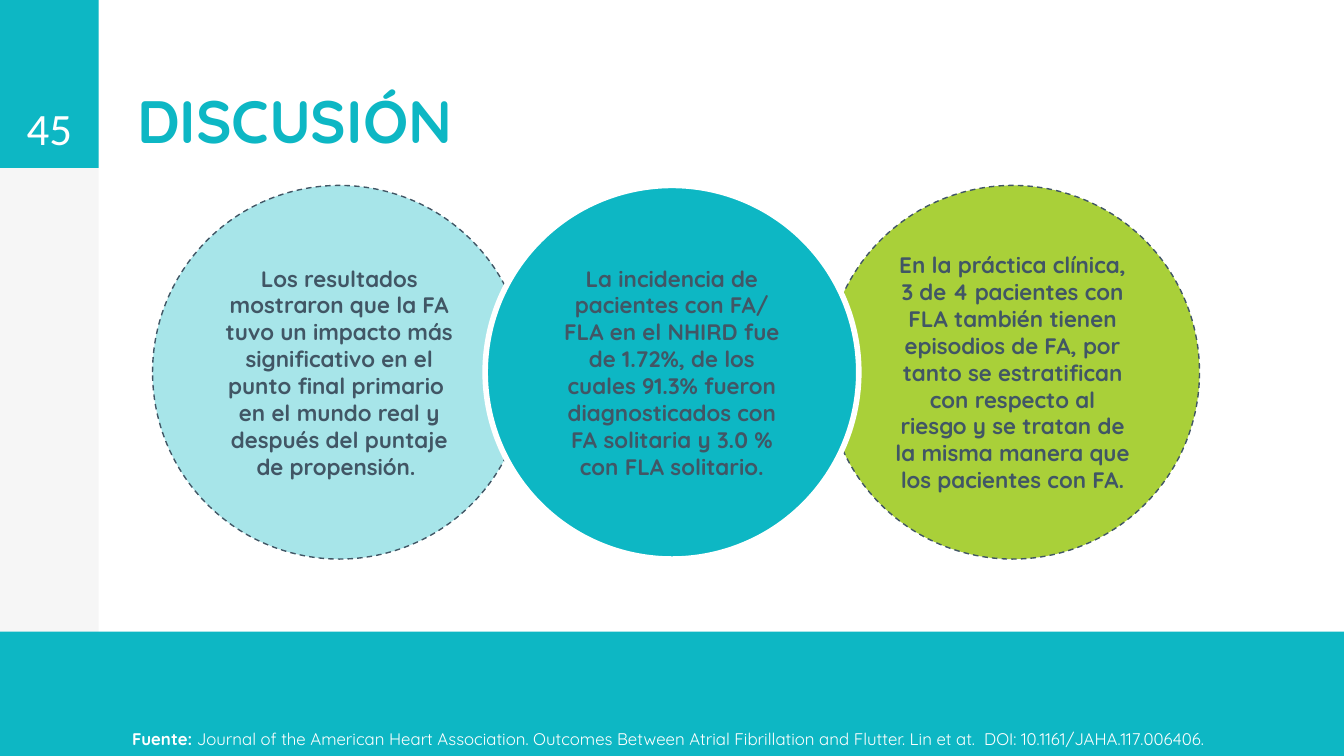
"""Build the discussion slide with three overlapping finding circles."""
from dataclasses import dataclass
from typing import Any, Optional

import pptx
import pptx.dml.color
import pptx.enum.dml
import pptx.enum.shapes
import pptx.enum.text
import pptx.util

EMU_PER_PX = 4572
ALIGN = pptx.enum.text.PP_ALIGN
ANCHOR = pptx.enum.text.MSO_ANCHOR
SHAPE = pptx.enum.shapes.MSO_SHAPE
DASH = pptx.enum.dml.MSO_LINE


@dataclass(frozen=True)
class Theme:
    teal: str = "0DB7C4"
    pale_teal: str = "A7E5E9"
    green: str = "A9D039"
    slate: str = "415665"
    grey: str = "F6F6F6"
    white: str = "FFFFFF"
    font: str = "Quicksand"
    number_font: str = "Calibri"
    title_size: int = 32
    number_size: int = 24
    body_size: int = 12
    source_size: int = 9


@dataclass(frozen=True)
class Box:
    left: int
    top: int
    width: int
    height: int

    def emu(self) -> tuple[int, ...]:
        return tuple(px * EMU_PER_PX for px in (self.left, self.top, self.width, self.height))


@dataclass(frozen=True)
class Finding:
    left: int
    fill: str
    line: str
    line_width: float
    dash: Optional[Any]
    text: str


THEME = Theme()
SLIDE = Box(0, 0, 2000, 1125)
SIDEBAR = Box(0, 0, 147, 1125)
NUMBER = Box(0, 0, 147, 250)
FOOTER = Box(0, 940, 2000, 185)
SOURCE = Box(177, 1075, 1764, 50)
TITLE = Box(184, 1, 1656, 250)
CIRCLE_TOP, DIAMETER = 276, 556

FINDINGS = (
    Finding(227, THEME.pale_teal, THEME.slate, 0.75, DASH.DASH,
            "Los resultados mostraron que la FA tuvo un impacto más significativo en el "
            "punto final primario  en el mundo real y después del puntaje de propensión. "),
    Finding(1229, THEME.green, THEME.slate, 0.75, DASH.DASH,
            "En la práctica clínica, 3 de 4 pacientes con FLA también tienen episodios de FA, "
            "por tanto se estratifican con respecto al riesgo y se tratan de la misma manera "
            "que los pacientes con FA."),
    Finding(722, THEME.teal, THEME.white, 3, None,
            "La incidencia de pacientes con FA/ FLA en el NHIRD fue de 1.72%, de los cuales "
            "91.3% fueron diagnosticados con FA solitaria y 3.0 % con FLA solitario."),
)


def rgb(value: str) -> pptx.dml.color.RGBColor:
    return pptx.dml.color.RGBColor.from_string(value)


def write(shape: Any, text: str, *, size: int, color: str, font: str = THEME.font,
          bold: bool = False, lead: str = "", align: Any = ALIGN.LEFT,
          anchor: Any = ANCHOR.MIDDLE, inset: int = 20) -> None:
    frame = shape.text_frame
    frame.word_wrap = True
    frame.auto_size = pptx.enum.text.MSO_AUTO_SIZE.NONE
    frame.vertical_anchor = anchor
    frame.margin_left = frame.margin_right = 20 * EMU_PER_PX
    frame.margin_top = frame.margin_bottom = inset * EMU_PER_PX
    paragraph = frame.paragraphs[0]
    paragraph.alignment = align
    for part, weight in ((lead, True), (text, bold)):
        if part:
            run = paragraph.add_run()
            run.text = part
            run.font.name = font
            run.font.size = pptx.util.Pt(size)
            run.font.bold = weight
            run.font.color.rgb = rgb(color)


def add_filled(slide: Any, kind: Any, box: Box, fill: str) -> Any:
    shape = slide.shapes.add_shape(kind, *box.emu())
    shape.shadow.inherit = False
    shape.fill.solid()
    shape.fill.fore_color.rgb = rgb(fill)
    shape.line.fill.background()
    return shape


def add_finding(slide: Any, finding: Finding) -> None:
    box = Box(finding.left, CIRCLE_TOP, DIAMETER, DIAMETER)
    circle = add_filled(slide, SHAPE.OVAL, box, finding.fill)
    circle.line.color.rgb = rgb(finding.line)
    circle.line.width = pptx.util.Pt(finding.line_width)
    if finding.dash is not None:
        circle.line.dash_style = finding.dash
    write(circle, finding.text, size=THEME.body_size, color=THEME.slate,
          bold=True, align=ALIGN.CENTER)


def main() -> None:
    deck = pptx.Presentation()
    _, _, deck.slide_width, deck.slide_height = SLIDE.emu()
    slide = deck.slides.add_slide(deck.slide_layouts[5])

    title = slide.shapes.title
    title.left, title.top, title.width, title.height = TITLE.emu()
    write(title, "DISCUSIÓN", size=THEME.title_size, color=THEME.teal,
          bold=True, anchor=ANCHOR.BOTTOM)

    add_filled(slide, SHAPE.RECTANGLE, SIDEBAR, THEME.grey)
    number = add_filled(slide, SHAPE.RECTANGLE, NUMBER, THEME.teal)
    write(number, "45", size=THEME.number_size, color=THEME.white,
          font=THEME.number_font, align=ALIGN.CENTER, anchor=ANCHOR.BOTTOM)

    for finding in FINDINGS:
        add_finding(slide, finding)

    add_filled(slide, SHAPE.RECTANGLE, FOOTER, THEME.teal)
    source = slide.shapes.add_textbox(*SOURCE.emu())
    write(source, "Journal of the American Heart Association. Outcomes Between Atrial "
          "Fibrillation and Flutter. Lin et at.  DOI: 10.1161/JAHA.117.006406.",
          lead="Fuente: ", size=THEME.source_size, color=THEME.white,
          anchor=ANCHOR.TOP, inset=10)

    deck.save("out.pptx")


if __name__ == "__main__":
    main()
